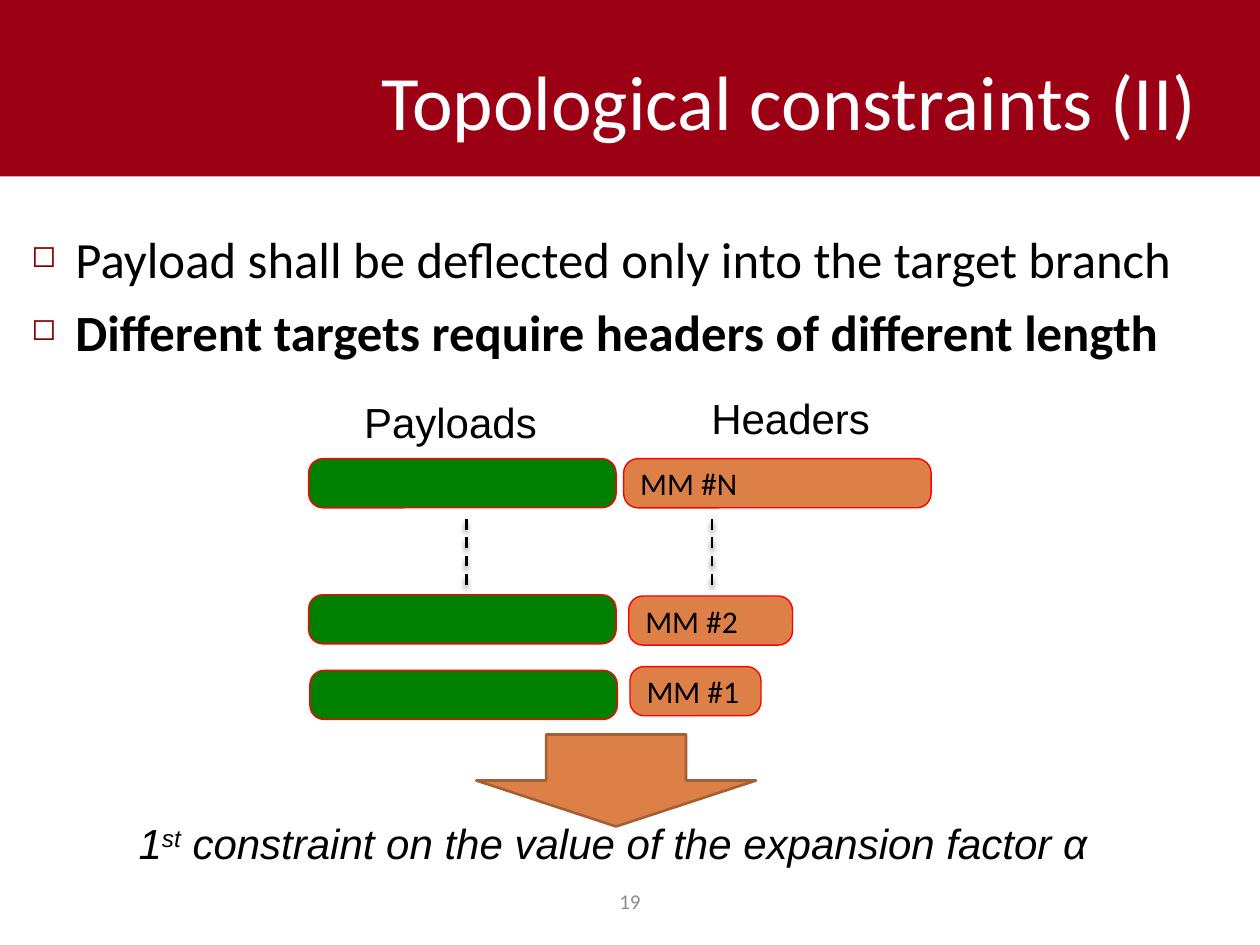
"""Build the slide on topological constraints for payloads and headers."""
import lxml.etree
import pptx
import pptx.dml.color
import pptx.enum.dml
import pptx.enum.shapes
import pptx.enum.text
import pptx.oxml
import pptx.oxml.ns
import pptx.util

Inches = pptx.util.Inches
Pt = pptx.util.Pt
SHAPE = pptx.enum.shapes.MSO_SHAPE
ALIGN = pptx.enum.text.PP_ALIGN
MIDDLE = pptx.enum.text.MSO_ANCHOR.MIDDLE
NS = 'xmlns:a="http://schemas.openxmlformats.org/drawingml/2006/main"'


def rgb(value):
    """Turn a hex string into a colour."""
    return pptx.dml.color.RGBColor.from_string(value)


def style(paragraph, size, name, color="000000", align=ALIGN.LEFT):
    """Align a paragraph and format all its runs."""
    paragraph.alignment = align
    for run in paragraph.runs:
        run.font.size = Pt(size)
        run.font.name = name
        run.font.color.rgb = rgb(color)


deck = pptx.Presentation()
deck.slide_width, deck.slide_height = Inches(10), Inches(7.5)
slide = deck.slides.add_slide(deck.slide_layouts[5])
shapes = slide.shapes

title = shapes.title
title.left, title.top = Inches(1.97), Inches(0.25)
title.width, title.height = Inches(7.63), Inches(1.08)
title.text_frame.text = "Topological constraints (II)"
title.text_frame.vertical_anchor = MIDDLE
style(title.text_frame.paragraphs[0], 44, "Calibri", "FFFFFF", ALIGN.RIGHT)

banner = shapes.add_shape(SHAPE.RECTANGLE, 0, 0, Inches(10), Inches(1.4))
banner.shadow.inherit = False
banner.fill.solid()
banner.fill.fore_color.rgb = rgb("9B0014")
banner.line.fill.background()
title._element.addprevious(banner._element)

points = shapes.add_textbox(Inches(0.15), Inches(1.76), Inches(9.63), Inches(2.78)).text_frame
points.word_wrap = True
points.text = ("Payload shall be deflected only into the target branch\n"
               "Different targets require headers of different length")
for point in points.paragraphs:
    properties = point._p.get_or_add_pPr()
    properties.set("marL", str(Inches(0.35)))
    properties.set("indent", str(-Inches(0.35)))
    for bullet in ('<a:buClr {}><a:srgbClr val="800000"/></a:buClr>',
                   '<a:buSzPct {} val="60000"/>',
                   '<a:buChar {} char="◻"/>'):
        properties.append(pptx.oxml.parse_xml(bullet.format(NS)))
    style(point, 29, "Calibri")
points.paragraphs[1].space_before = Pt(7)
points.paragraphs[1].runs[0].font.bold = True

arrow = shapes.add_shape(SHAPE.DOWN_ARROW, Inches(3.78), Inches(5.83), Inches(2.22), Inches(0.73))
arrow.shadow.inherit = False
arrow.fill.solid()
arrow.fill.fore_color.rgb = rgb("DD8047")
arrow.line.color.rgb = rgb("A35F35")
arrow.line.width = Pt(1.5)

for left, top, width, fill, label in (
    (4.95, 3.64, 2.44, "DD8047", "MM #N"),
    (4.99, 4.73, 1.3, "DD8047", "MM #2"),
    (5, 5.29, 1.04, "DD8047", "MM #1"),
    (2.45, 3.64, 2.44, "008000", ""),
    (2.45, 4.72, 2.44, "008000", ""),
    (2.46, 5.32, 2.44, "008000", ""),
):
    block = shapes.add_shape(SHAPE.ROUNDED_RECTANGLE, Inches(left), Inches(top),
                             Inches(width), Inches(0.39))
    block.adjustments[0] = 0.29
    block.shadow.inherit = False
    block.fill.solid()
    block.fill.fore_color.rgb = rgb(fill)
    block.line.color.rgb = rgb("FF0000")
    block.line.width = Pt(0.79)
    if label:
        block.text_frame.text = label
        block.text_frame.vertical_anchor = MIDDLE
        style(block.text_frame.paragraphs[0], 18, "Calibri")

for x in (3.7, 5.65):
    ellipsis = shapes.add_connector(pptx.enum.shapes.MSO_CONNECTOR.STRAIGHT,
                                    Inches(x), Inches(4.12), Inches(x), Inches(4.65))
    ellipsis.line.color.rgb = rgb("000000")
    ellipsis.line.width = Pt(1.5)
    ellipsis.line.dash_style = pptx.enum.dml.MSO_LINE.DASH
    ellipsis._element.spPr.append(pptx.oxml.parse_xml(
        f'<a:effectLst {NS}><a:outerShdw blurRad="{Pt(3)}" dist="{Pt(2.4)}" dir="5400000">'
        '<a:srgbClr val="000000"><a:alpha val="45000"/></a:srgbClr>'
        '</a:outerShdw></a:effectLst>'))

for left, top, width, heading in ((5.54, 3.07, 1.47, "Headers"), (2.78, 3.1, 1.59, "Payloads")):
    frame = shapes.add_textbox(Inches(left), Inches(top), Inches(width), Inches(0.5)).text_frame
    frame.word_wrap = False
    frame.text = heading
    style(frame.paragraphs[0], 24, "Arial", align=ALIGN.CENTER)

conclusion = shapes.add_textbox(Inches(0.86), Inches(6.44), Inches(8.01), Inches(0.5)).text_frame
conclusion.word_wrap = False
sentence = conclusion.paragraphs[0]
for part in ("1", "st", " constraint on the value of the expansion factor α"):
    run = sentence.add_run()
    run.text = part
    run.font.italic = True
style(sentence, 24, "Arial", align=ALIGN.CENTER)
sentence.runs[1].font._element.set("baseline", "30000")

page_number = shapes.add_textbox(Inches(4.58), Inches(6.95), Inches(0.84), Inches(0.4)).text_frame
page_number.word_wrap = True
page_number.vertical_anchor = MIDDLE
page_number.text = "19"
style(page_number.paragraphs[0], 12, "Calibri", "8C8C8C", ALIGN.CENTER)

deck.save("out.pptx")
